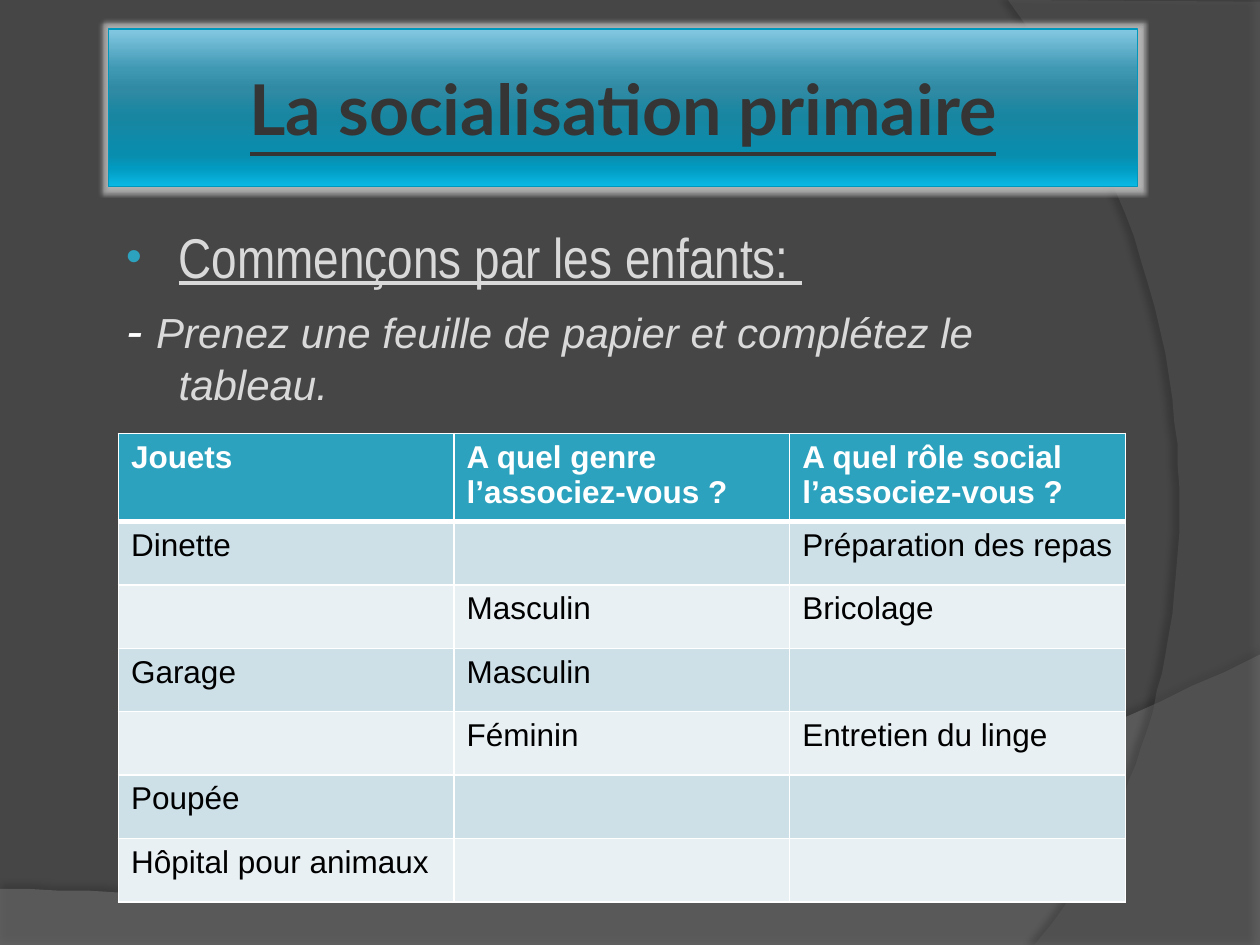
from lxml.etree import SubElement
from pptx import Presentation
from pptx.dml.color import RGBColor
from pptx.enum.shapes import MSO_SHAPE
from pptx.enum.text import MSO_ANCHOR, PP_ALIGN
from pptx.oxml import parse_xml
from pptx.oxml.ns import nsdecls, qn
from pptx.util import Pt

BACKGROUND = RGBColor(0x46, 0x46, 0x46)
WAVE = RGBColor(0x7F, 0x7F, 0x7F)
ARC = RGBColor(0x5E, 0x5E, 0x5E)
TITLE_LINE = RGBColor(0x00, 0x97, 0xBD)
TITLE_TEXT = RGBColor(0x35, 0x35, 0x35)
LIGHT_TEXT = RGBColor(0xD9, 0xD9, 0xD9)
GLOW = RGBColor(0xBF, 0xBF, 0xBF)
WHITE = RGBColor(0xFF, 0xFF, 0xFF)
BLACK = RGBColor(0x00, 0x00, 0x00)
ACCENT = RGBColor(0x2D, 0xA2, 0xBF)
BANDS = RGBColor(0xCD, 0xE0, 0xE8), RGBColor(0xE8, 0xF0, 0xF4)

TITLE = "La socialisation primaire"
TITLE_STOPS = [(0, "84C8E3"), (25, "4099B3"), (38, "318AA4"), (55, "1886A1"),
               (80, "098DAE"), (88, "019AC0"), (100, "0ABAE6")]
TITLE_FONT = dict(name="Lato", size=Pt(40), bold=True, underline=True)

# Each paragraph: space before, bullet, runs of (text, colour, font values)
BODY = [
    (6.4, "•", [("Commençons par les enfants: ", LIGHT_TEXT,
                 dict(name="Arial Narrow", size=Pt(32), underline=True))]),
    (5.6, None, [("- ", WHITE, dict(name="Arial", size=Pt(28), italic=True)),
                 ("Prenez une feuille de papier et complétez le tableau.", LIGHT_TEXT,
                  dict(name="Arial", size=Pt(24), italic=True))]),
]

TOYS = [
    ("Jouets", "A quel genre l’associez-vous ?", "A quel rôle social l’associez-vous ?"),
    ("Dinette", "", "Préparation des repas"),
    ("", "Masculin", "Bricolage"),
    ("Garage", "Masculin", ""),
    ("", "Féminin", "Entretien du linge"),
    ("Poupée", "", ""),
    ("Hôpital pour animaux", "", ""),
]
COLUMN_WIDTH, HEADER_HEIGHT, ROW_HEIGHT = 191.8, 47.5, 36.2

# Each backdrop: corners before the curve, two curve controls, curve end,
# colour, opacity, shadow opacity, shadow distance, shadow direction
BACKDROPS = [
    ([(0, 507.6), (0, 540), (720, 540), (720, 374.4)],
     [(402.5, 524.9), (281.5, 517.7), (0, 507.6)], WAVE, 45, 35, 3.5, 270),
    ([(720, 1.4), (720, 540), (591.1, 540)],
     [(673.2, 445.7), (733, 216), (576, 0)], ARC, 40, 45, 4, 180),
]


def curve_points(start, controls, steps=48):
    """Sample a cubic Bezier curve, leaving out its start."""
    points = [start, *controls]
    for step in range(1, steps + 1):
        t = step / steps
        weights = (1 - t) ** 3, 3 * t * (1 - t) ** 2, 3 * t * t * (1 - t), t ** 3
        yield tuple(sum(w * p[axis] for w, p in zip(weights, points)) for axis in (0, 1))


def add_effect(shape, xml):
    shape.shadow.inherit = False
    effects = shape._element.spPr.find(qn("a:effectLst"))
    effects.append(parse_xml(xml))


def add_run(paragraph, text, color, values):
    run = paragraph.add_run()
    run.text = text
    run.font.color.rgb = color
    for name, value in values.items():
        setattr(run.font, name, value)


def add_backdrop(slide, corners, controls, color, opacity, shade, distance, direction):
    builder = slide.shapes.build_freeform(*corners[0], scale=Pt(1))
    builder.add_line_segments([*corners[1:], *curve_points(corners[-1], controls)])
    shape = builder.convert_to_shape()
    shape.fill.solid()
    shape.fill.fore_color.rgb = color
    shape.line.fill.background()
    fill_color = shape._element.spPr.find(qn("a:solidFill"))[0]
    SubElement(fill_color, qn("a:alpha"), val=str(opacity * 1000))
    add_effect(shape, f'<a:outerShdw {nsdecls("a")} blurRad="{Pt(4)}" dist="{Pt(distance)}" '
               f'dir="{direction * 60000}"><a:srgbClr val="000000">'
               f'<a:alpha val="{shade * 1000}"/></a:srgbClr></a:outerShdw>')


def add_title(slide):
    shape = slide.shapes.add_shape(MSO_SHAPE.RECTANGLE, Pt(62), Pt(16.6), Pt(588), Pt(90))
    stops = "".join(f'<a:gs pos="{place * 1000}"><a:srgbClr val="{color}"/></a:gs>'
                    for place, color in TITLE_STOPS)
    shape._element.spPr.find(qn("a:prstGeom")).addnext(parse_xml(
        f'<a:gradFill {nsdecls("a")} rotWithShape="1"><a:gsLst>{stops}</a:gsLst>'
        '<a:lin ang="5400000" scaled="0"/></a:gradFill>'))
    shape.line.color.rgb = TITLE_LINE
    shape.line.width = Pt(0.75)
    add_effect(shape, f'<a:glow {nsdecls("a")} rad="{Pt(3)}"><a:srgbClr val="{GLOW}">'
               '<a:alpha val="70000"/></a:srgbClr></a:glow>')
    frame = shape.text_frame
    frame.word_wrap = True
    frame.vertical_anchor = MSO_ANCHOR.MIDDLE
    for side in ("left", "top", "right", "bottom"):
        setattr(frame, f"margin_{side}", Pt(3.6))
    paragraph = frame.paragraphs[0]
    paragraph.alignment = PP_ALIGN.CENTER
    add_run(paragraph, TITLE, TITLE_TEXT, TITLE_FONT)


def add_body(slide):
    frame = slide.shapes.add_textbox(Pt(62), Pt(123.8), Pt(588), Pt(356.4)).text_frame
    frame.word_wrap = True
    for index, (space, bullet, runs) in enumerate(BODY):
        paragraph = frame.add_paragraph() if index else frame.paragraphs[0]
        paragraph.space_before = Pt(space)
        properties = paragraph._p.get_or_add_pPr()
        properties.set("marL", str(Pt(33)))
        properties.set("indent", str(Pt(-30)))
        if bullet:
            color = SubElement(properties, qn("a:buClr"))
            SubElement(color, qn("a:srgbClr"), val=str(ACCENT))
            SubElement(properties, qn("a:buSzPct"), val="80000")
            SubElement(properties, qn("a:buFont"), typeface="Arial")
            SubElement(properties, qn("a:buChar"), char=bullet)
        else:
            SubElement(properties, qn("a:buNone"))
        for run in runs:
            add_run(paragraph, *run)


def set_borders(cell, widths):
    properties = cell._tc.get_or_add_tcPr()
    for position, (side, width) in enumerate(widths.items()):
        properties.insert(position, parse_xml(
            f'<a:ln{side} {nsdecls("a")} w="{Pt(width)}"><a:solidFill>'
            f'<a:srgbClr val="{WHITE}"/></a:solidFill></a:ln{side}>'))


def add_toy_table(slide):
    rows, columns = len(TOYS), len(TOYS[0])
    height = HEADER_HEIGHT + (rows - 1) * ROW_HEIGHT
    table = slide.shapes.add_table(rows, columns, Pt(67.7), Pt(247.7),
                                   Pt(columns * COLUMN_WIDTH), Pt(height)).table
    for column in table.columns:
        column.width = Pt(COLUMN_WIDTH)
    for r, texts in enumerate(TOYS):
        header = r == 0
        table.rows[r].height = Pt(HEADER_HEIGHT if header else ROW_HEIGHT)
        for c, text in enumerate(texts):
            cell = table.cell(r, c)
            cell.fill.solid()
            cell.fill.fore_color.rgb = ACCENT if header else BANDS[(r - 1) % 2]
            set_borders(cell, dict(L=1, R=1, T=3 if r == 1 else 1, B=3 if header else 1))
            if text:
                add_run(cell.text_frame.paragraphs[0], text, WHITE if header else BLACK,
                        dict(name="Arial", size=Pt(18), bold=header))


def main():
    presentation = Presentation()
    presentation.slide_width, presentation.slide_height = Pt(720), Pt(540)
    slide = presentation.slides.add_slide(presentation.slide_layouts[6])
    slide.background.fill.solid()
    slide.background.fill.fore_color.rgb = BACKGROUND
    for backdrop in BACKDROPS:
        add_backdrop(slide, *backdrop)
    add_title(slide)
    add_body(slide)
    add_toy_table(slide)
    presentation.save("out.pptx")


if __name__ == "__main__":
    main()
